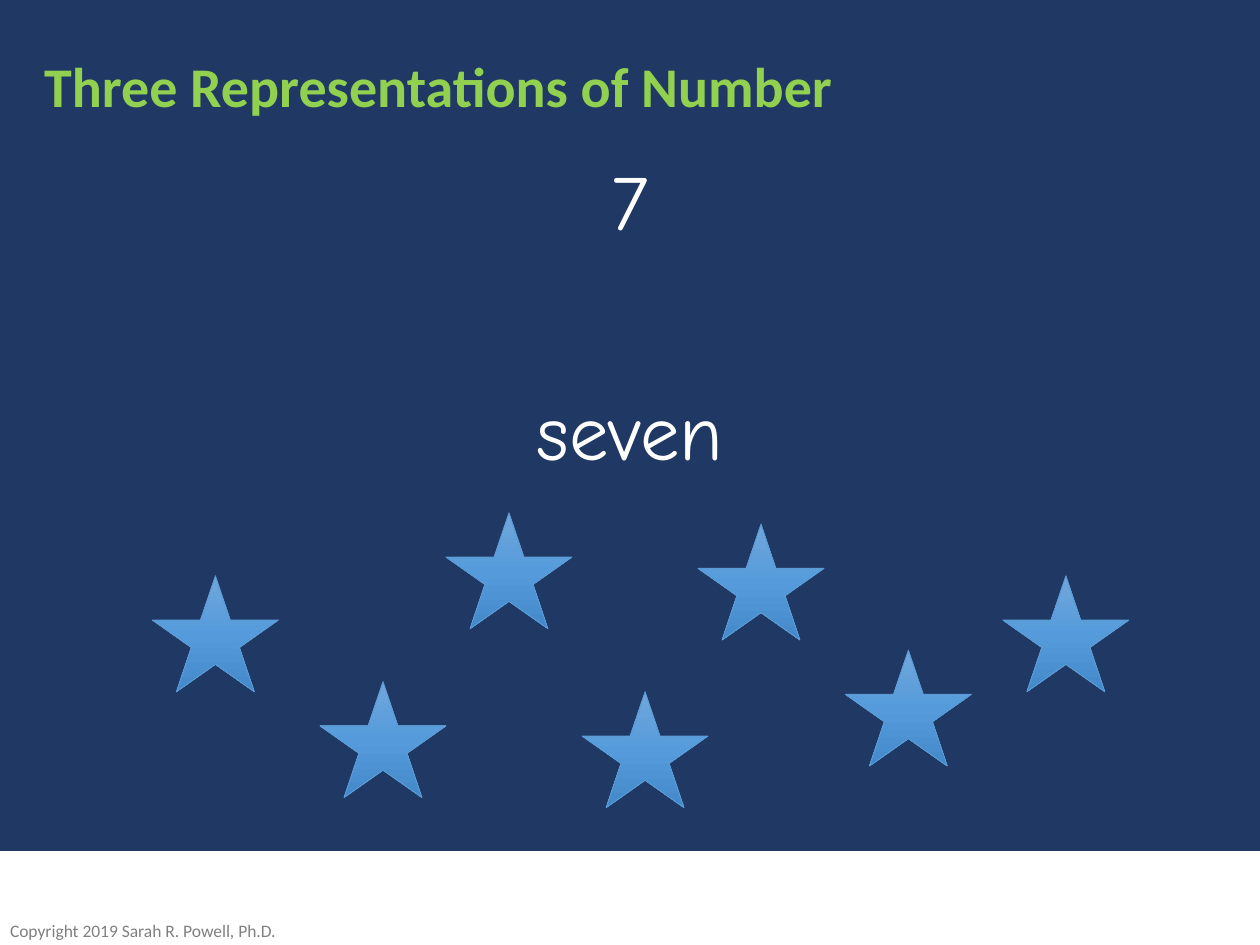
"""Build the slide on three representations of the number seven."""
from copy import deepcopy

from pptx import Presentation
from pptx import util as u
from pptx.dml.color import RGBColor
from pptx.enum import shapes, text

TITLE = "Three Representations of Number"
FORMS = ["7", "seven"]
COPYRIGHT = "Copyright 2019 Sarah R. Powell, Ph.D."
STARS = [(1.21, 4.57), (3.54, 4.07), (2.54, 5.41), (5.54, 4.16),
         (4.62, 5.49), (6.71, 5.16), (7.96, 4.57)]
STAR_SIZE = (1, 0.92)
GRADIENT = [(0, "71A6DB"), (0.5, "559BDB"), (1, "448ACA")]
NAVY, GREEN, WHITE, GRAY, BLUE = "203864", "92D050", "FFFFFF", "808080", "5B9BD5"
WIDTH, HEIGHT, MARGIN, FOOTER_TOP = 10, 7.5, 0.25, 6.76


def rgb(value):
    return RGBColor.from_string(value)


def inches(*values):
    return [u.Inches(v) for v in values]


def paint(fill, color):
    fill.solid()
    fill.fore_color.rgb = rgb(color)


def style(p, font, size, color, bold=False):
    p.font.name, p.font.size, p.font.bold = font, u.Pt(size), bold
    p.font.color.rgb = rgb(color)


def add_shape(slide, kind, box, line, weight):
    sp = slide.shapes.add_shape(kind, *inches(*box))
    sp.shadow.inherit = False
    sp.line.color.rgb = rgb(line)
    sp.line.width = u.Pt(weight)
    return sp


def add_title(slide):
    sp = slide.shapes.title
    sp.left, sp.top, sp.width, sp.height = inches(MARGIN, MARGIN, WIDTH - 2 * MARGIN, 0.8)
    paint(sp.fill, NAVY)
    tf = sp.text_frame
    tf.text = TITLE
    tf.vertical_anchor = text.MSO_ANCHOR.MIDDLE
    p = tf.paragraphs[0]
    p.alignment, p.line_spacing = text.PP_ALIGN.LEFT, 1.1
    style(p, "Calibri", 32, GREEN, True)


def add_forms(slide):
    sp = slide.shapes.add_textbox(*inches(MARGIN, 1.08, WIDTH - 2 * MARGIN, 5.29))
    tf = sp.text_frame
    tf.word_wrap = True
    tf.text = "\n".join(FORMS)
    for p in tf.paragraphs:
        p.alignment, p.line_spacing = text.PP_ALIGN.CENTER, 1.1
        style(p, "Comic Neue", 45, WHITE)
    tf.paragraphs[1].space_before = u.Pt(72)


def add_footer(slide):
    band = add_shape(slide, shapes.MSO_SHAPE.RECTANGLE,
                     (0, FOOTER_TOP, WIDTH, HEIGHT - FOOTER_TOP), WHITE, 1)
    paint(band.fill, WHITE)
    sp = slide.shapes.add_textbox(*inches(0, 7.3, 2.4, 0.17))
    tf = sp.text_frame
    tf.word_wrap = True
    tf.margin_left, tf.margin_right, tf.margin_top, tf.margin_bottom = inches(0.08, 0, 0, 0)
    tf.vertical_anchor = text.MSO_ANCHOR.MIDDLE
    tf.text = COPYRIGHT
    style(tf.paragraphs[0], "Calibri", 10, GRAY)


def add_star(slide, place):
    sp = add_shape(slide, shapes.MSO_SHAPE.STAR_5_POINT, (*place, *STAR_SIZE), BLUE, 0.5)
    sp.fill.gradient()
    sp.fill.gradient_angle = 270
    first = sp.fill._fill._gradFill.gsLst[0]
    first.addnext(deepcopy(first))
    for stop, (position, color) in zip(sp.fill.gradient_stops, GRADIENT):
        stop.position = position
        stop.color.rgb = rgb(color)


def main():
    prs = Presentation()
    prs.slide_width, prs.slide_height = inches(WIDTH, HEIGHT)
    slide = prs.slides.add_slide(prs.slide_layouts[5])
    paint(slide.background.fill, NAVY)
    add_footer(slide)
    add_title(slide)
    add_forms(slide)
    for place in STARS:
        add_star(slide, place)
    prs.save("out.pptx")


if __name__ == "__main__":
    main()
